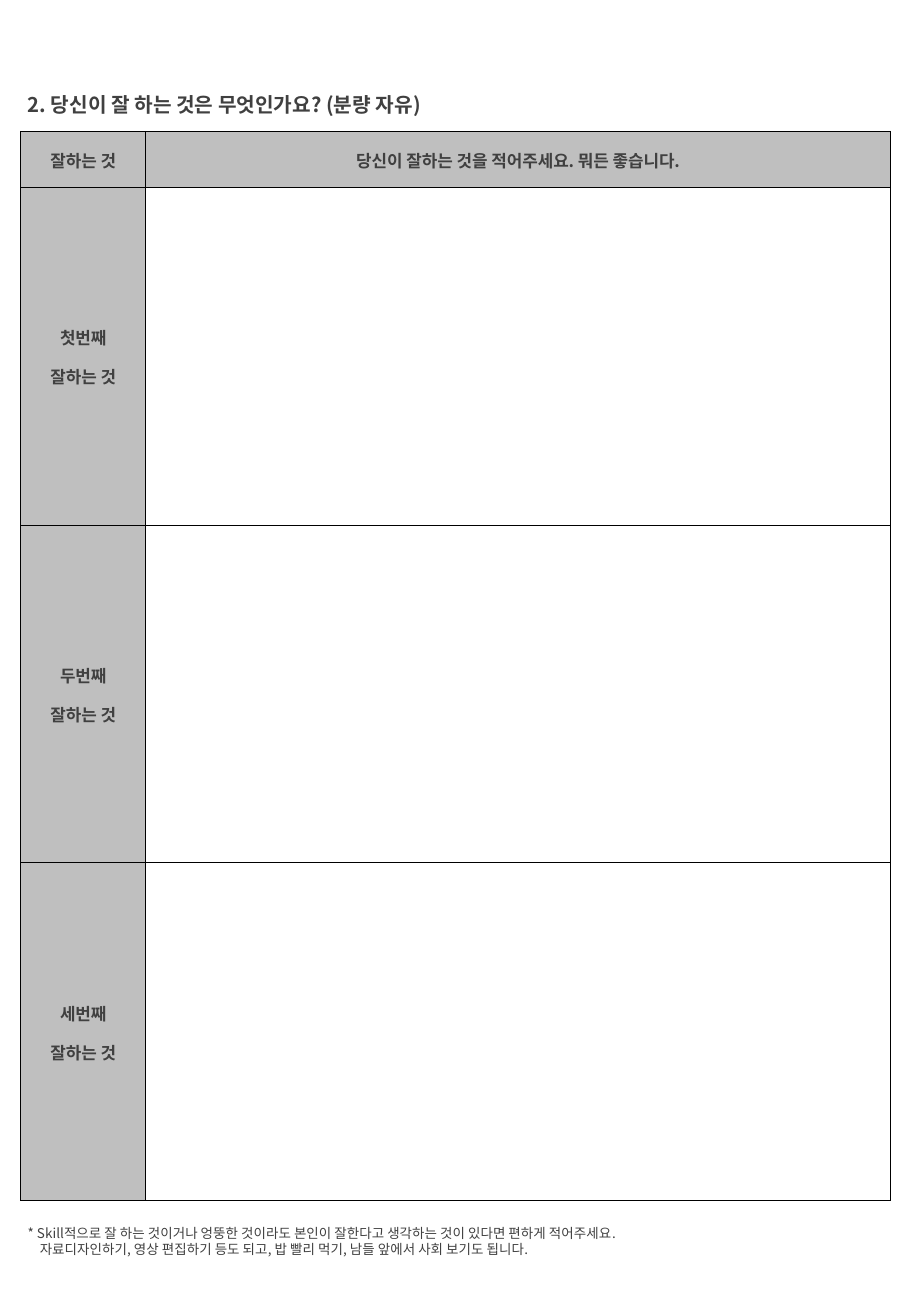
from lxml.etree import SubElement
from pptx import Presentation
from pptx.dml.color import RGBColor
from pptx.enum.text import MSO_ANCHOR, PP_ALIGN
from pptx.oxml.ns import qn
from pptx.util import Inches, Pt

COLORS = {"text": "404040", "label": "BFBFBF", "border": "000000"}
FONT = "Noto Sans CJK KR"
COLUMNS = [1.03, 6.13]
HEADER_ROW, ANSWER_ROW = 0.46, 2.78
HEADERS = ["잘하는 것", "당신이 잘하는 것을 적어주세요. 뭐든 좋습니다."]
ORDINALS = ["첫번째", "두번째", "세번째"]
TITLE = "2. 당신이 잘 하는 것은 무엇인가요? (분량 자유)"
NOTES = [
    "* Skill적으로 잘 하는 것이거나 엉뚱한 것이라도 본인이 잘한다고 생각하는 것이 있다면 편하게 적어주세요.",
    "자료디자인하기, 영상 편집하기 등도 되고, 밥 빨리 먹기, 남들 앞에서 사회 보기도 됩니다.",
]
CELL_PARAGRAPH = {"alignment": PP_ALIGN.CENTER, "line_spacing": 1.07, "space_after": Pt(8)}
CELL_LAYOUT = {
    "vertical_anchor": MSO_ANCHOR.MIDDLE,
    "margin_left": Inches(0.07),
    "margin_right": Inches(0.07),
    "margin_top": 0,
    "margin_bottom": 0,
}


def apply(target, values):
    for name, value in values.items():
        setattr(target, name, value)


def write_lines(frame, lines, size, bold=False, paragraph_format=None):
    for index, line in enumerate(lines):
        para = frame.add_paragraph() if index else frame.paragraphs[0]
        apply(para, paragraph_format or {})
        span = para.add_run()
        span.text = line
        apply(span.font, {"name": FONT, "size": Pt(size), "bold": bold})
        span.font.color.rgb = RGBColor.from_string(COLORS["text"])
        SubElement(span.font._element, qn("a:ea"), typeface=FONT)


def add_text(page, place, lines, **text_format):
    box = page.shapes.add_textbox(*[Inches(length) for length in place])
    box.text_frame.word_wrap = True
    write_lines(box.text_frame, lines, **text_format)
    return box


def draw_borders(cell):
    properties = cell._tc.get_or_add_tcPr()
    for side in ("lnL", "lnR", "lnT", "lnB"):
        line = SubElement(properties, qn(f"a:{side}"), w=str(Pt(0.5)))
        fill = SubElement(line, qn("a:solidFill"))
        SubElement(fill, qn("a:srgbClr"), val=COLORS["border"])


def fill_cell(cell, lines):
    draw_borders(cell)
    apply(cell, CELL_LAYOUT)
    if not lines:
        cell.fill.background()
        return
    cell.fill.solid()
    cell.fill.fore_color.rgb = RGBColor.from_string(COLORS["label"])
    write_lines(cell.text_frame, lines, 10, True, CELL_PARAGRAPH)


def add_answer_table(page):
    content = [[[header] for header in HEADERS]]
    content += [[[ordinal, HEADERS[0]], []] for ordinal in ORDINALS]
    heights = [HEADER_ROW] + [ANSWER_ROW] * len(ORDINALS)
    place = [Inches(length) for length in (0.17, 1.08, sum(COLUMNS), sum(heights))]
    table = page.shapes.add_table(len(heights), len(COLUMNS), *place).table
    apply(table, {"first_row": False, "horz_banding": False})
    for column, width in zip(table.columns, COLUMNS):
        column.width = Inches(width)
    for row, height, texts in zip(table.rows, heights, content):
        row.height = Inches(height)
        for cell, lines in zip(row.cells, texts):
            fill_cell(cell, lines)


def main():
    deck = Presentation()
    apply(deck, {"slide_width": Inches(7.5), "slide_height": Inches(10.83)})
    page = deck.slides.add_slide(deck.slide_layouts[6])
    add_text(page, (0.13, 0.71, 3.88, 0.3), [TITLE], size=12, bold=True,
             paragraph_format={"alignment": PP_ALIGN.JUSTIFY})
    add_answer_table(page)
    notes = add_text(page, (0.13, 10.03, 7.2, 0.37), NOTES, size=8)
    indented = notes.text_frame.paragraphs[1]
    indented._p.get_or_add_pPr().set("marL", str(Inches(0.1)))
    deck.save("out.pptx")


if __name__ == "__main__":
    main()
